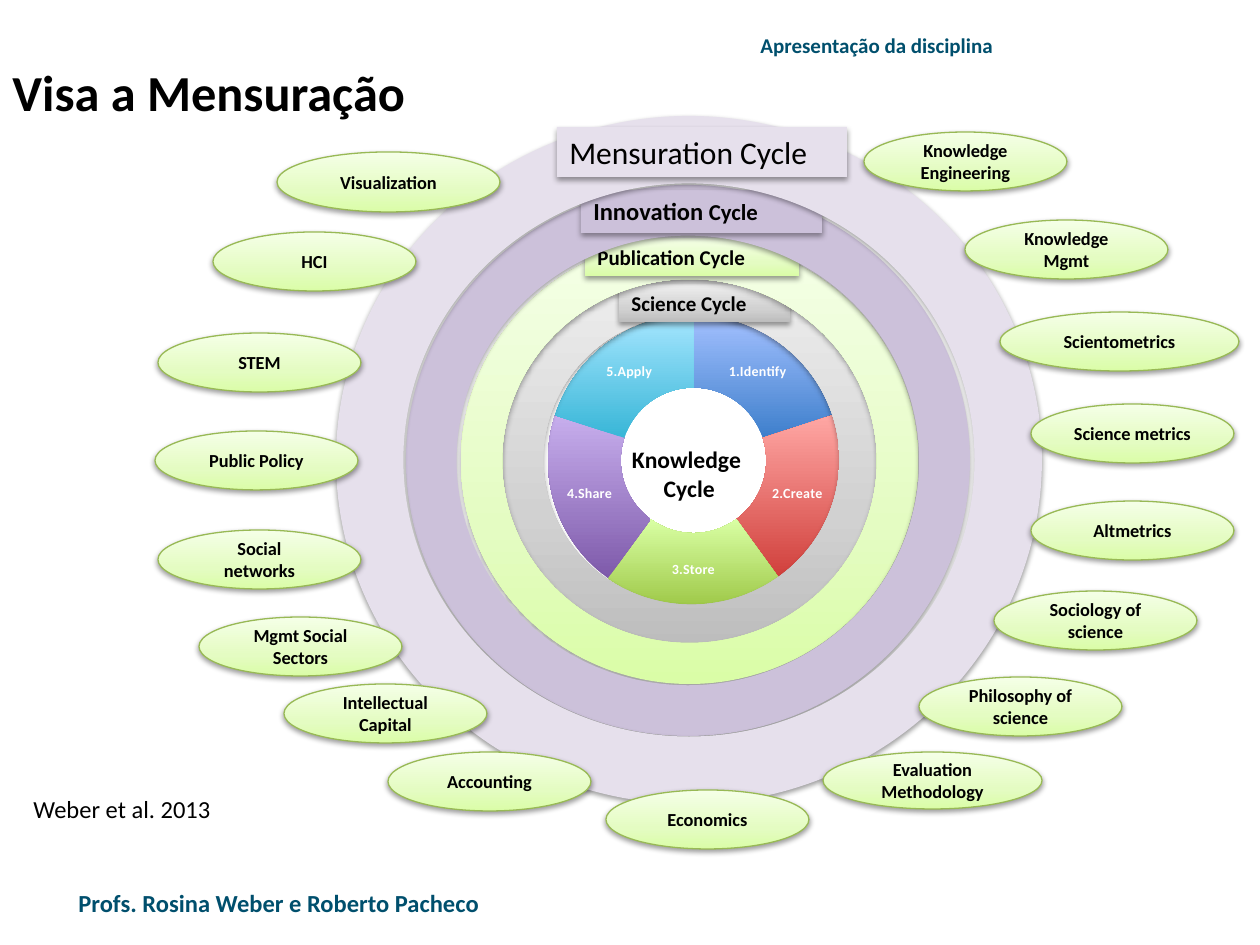
from copy import deepcopy
from dataclasses import dataclass

from lxml import etree
from pptx import Presentation
from pptx.chart.data import CategoryChartData
from pptx.dml.color import RGBColor
from pptx.enum.chart import XL_CHART_TYPE
from pptx.enum.shapes import MSO_SHAPE
from pptx.enum.text import MSO_ANCHOR, MSO_AUTO_SIZE, PP_ALIGN
from pptx.oxml.ns import qn
from pptx.util import Emu, Pt

DOUGHNUT = XL_CHART_TYPE.DOUGHNUT
DONUT, RECTANGLE, OVAL = MSO_SHAPE.DONUT, MSO_SHAPE.RECTANGLE, MSO_SHAPE.OVAL
TOP, MIDDLE = MSO_ANCHOR.TOP, MSO_ANCHOR.MIDDLE
LEFT, CENTER = PP_ALIGN.LEFT, PP_ALIGN.CENTER
FIT_SHAPE = MSO_AUTO_SIZE.SHAPE_TO_FIT_TEXT

FONT = "Calibri"
BLACK = RGBColor(0x00, 0x00, 0x00)
WHITE = RGBColor(0xFF, 0xFF, 0xFF)
TEAL = RGBColor(0x00, 0x4F, 0x6D)
GREEN_LINE = RGBColor(0x98, 0xB9, 0x55)
LILAC = (RGBColor(0xCC, 0xC1, 0xDA),)
PALE_LILAC = (RGBColor(0xE6, 0xE0, 0xEC),)
GREY = (RGBColor(0xBD, 0xBD, 0xBD), RGBColor(0xD1, 0xD1, 0xD1), RGBColor(0xEE, 0xEE, 0xEE))
GREEN = (RGBColor(0xDA, 0xFD, 0xA7), RGBColor(0xE4, 0xFC, 0xC2), RGBColor(0xF5, 0xFF, 0xE7))
GRADIENT_POSITIONS = (0, 0.35, 1)


@dataclass(frozen=True)
class Box:
    left: int
    top: int
    width: int
    height: int

    def emu(self) -> list[Emu]:
        return [px(value) for value in (self.left, self.top, self.width, self.height)]


@dataclass(frozen=True)
class TextRun:
    text: str
    size: float
    bold: bool = True
    color: RGBColor = BLACK


@dataclass(frozen=True)
class Cycle:
    ring: Box
    thickness: float
    label: Box
    runs: tuple[TextRun, ...]
    colors: tuple[RGBColor, ...]


@dataclass(frozen=True)
class Field:
    name: str
    left: int
    top: int
    width: int = 203
    height: int = 59


CYCLES = (
    Cycle(Box(501, 272, 381, 375), 0.113, Box(619, 284, 171, 38),
          (TextRun("Science Cycle", 12),), GREY),
    Cycle(Box(461, 238, 457, 446), 0.092, Box(585, 238, 214, 38),
          (TextRun("Publication Cycle", 12),), GREEN),
    Cycle(Box(406, 185, 564, 551), 0.092, Box(581, 190, 241, 43),
          (TextRun("Innovation ", 14), TextRun("Cycle", 13)), LILAC),
    Cycle(Box(336, 116, 706, 688), 0.098, Box(557, 127, 290, 50),
          (TextRun("Mensuration Cycle", 18, False),), PALE_LILAC),
)
FIELDS = (
    Field("Knowledge Engineering", 864, 132),
    Field("Knowledge Mgmt", 965, 220),
    Field("Scientometrics", 1000, 312, 239),
    Field("Science metrics", 1031, 404),
    Field("Altmetrics", 1031, 501),
    Field("Visualization", 277, 152, 223, 60),
    Field("HCI", 213, 232),
    Field("STEM", 158, 333),
    Field("Public Policy", 155, 431),
    Field("Social networks", 158, 530),
    Field("Mgmt Social Sectors", 199, 617),
    Field("Economics", 606, 790),
    Field("Evaluation Methodology", 823, 752, 219, 57),
    Field("Philosophy of science", 919, 677),
    Field("Sociology of science", 994, 591),
    Field("Accounting", 388, 752),
    Field("Intellectual Capital", 284, 684),
)
STEPS = ("1.Identify", "2.Create", "3.Store", "4.Share", "5.Apply")


def px(value: int) -> Emu:
    return Emu(value * 914400 // 126)


def add_run(paragraph, text_run: TextRun) -> None:
    run = paragraph.add_run()
    run.text = text_run.text
    run.font.name = FONT
    run.font.size = Pt(text_run.size)
    run.font.bold = text_run.bold
    run.font.color.rgb = text_run.color


def write_text(shape, runs, anchor=TOP, alignment=LEFT, auto_size=None) -> None:
    frame = shape.text_frame
    frame.word_wrap = True
    frame.vertical_anchor = anchor
    if auto_size is not None:
        frame.auto_size = auto_size
    paragraph = frame.paragraphs[0]
    paragraph.alignment = alignment
    for text_run in runs:
        add_run(paragraph, text_run)


def add_shadow(shape) -> None:
    shape.shadow.inherit = False
    effects = shape._element.spPr.find(qn("a:effectLst"))
    shadow = etree.SubElement(effects, qn("a:outerShdw"), blurRad="40000", dist="20000",
                              dir="5400000", rotWithShape="0")
    color = etree.SubElement(shadow, qn("a:srgbClr"), val="000000")
    etree.SubElement(color, qn("a:alpha"), val="38000")


def add_filled_shape(shapes, kind, box: Box, colors: tuple[RGBColor, ...]):
    shape = shapes.add_shape(kind, *box.emu())
    if len(colors) == 1:
        shape.fill.solid()
        shape.fill.fore_color.rgb = colors[0]
    else:
        shape.fill.gradient()
        shape.fill.gradient_angle = 90
        stops = shape._element.spPr.find(qn("a:gradFill")).find(qn("a:gsLst"))
        stops.insert(1, deepcopy(stops[0]))
        for stop, position, color in zip(shape.fill.gradient_stops, GRADIENT_POSITIONS, colors):
            stop.position = position
            stop.color.rgb = color
    shape.line.fill.background()
    add_shadow(shape)
    return shape


def add_cycle(slide, cycle: Cycle) -> None:
    group = slide.shapes.add_group_shape()
    ring = add_filled_shape(group.shapes, DONUT, cycle.ring, cycle.colors)
    ring.adjustments[0] = cycle.thickness
    label = add_filled_shape(group.shapes, RECTANGLE, cycle.label, cycle.colors)
    write_text(label, cycle.runs, auto_size=FIT_SHAPE)


def add_field(shapes, field: Field) -> None:
    box = Box(field.left, field.top, field.width, field.height)
    oval = add_filled_shape(shapes, OVAL, box, GREEN)
    oval.line.color.rgb = GREEN_LINE
    oval.line.width = Pt(0.75)
    write_text(oval, [TextRun(field.name, 10.5)], MIDDLE, CENTER)


def add_text(slide, box: Box, text_run: TextRun, anchor=TOP, auto_size=FIT_SHAPE) -> None:
    write_text(slide.shapes.add_textbox(*box.emu()), [text_run], anchor, auto_size=auto_size)


def set_layout(parent, index: int, **settings) -> None:
    for existing in parent.findall(qn("c:layout")):
        parent.remove(existing)
    layout = etree.Element(qn("c:layout"))
    manual = etree.SubElement(layout, qn("c:manualLayout"))
    for name, value in settings.items():
        etree.SubElement(manual, qn(f"c:{name}"), val=str(value))
    parent.insert(index, layout)


def add_knowledge_chart(slide) -> None:
    data = CategoryChartData()
    data.categories = STEPS
    data.add_series("Series 1", [20] * len(STEPS))
    chart = slide.shapes.add_chart(DOUGHNUT, *Box(505, 302, 397, 320).emu(), data).chart
    chart.chart_style = 26
    chart.has_legend = False
    chart.font.name = FONT
    chart.font.size = Pt(11)
    chart.font.color.rgb = WHITE
    plot = chart.plots[0]
    plot.vary_by_categories = True
    plot.has_data_labels = True
    labels = plot.data_labels
    labels.show_category_name = True
    labels.show_percentage = False
    labels.show_value = False
    labels.font.name = FONT
    labels.font.size = Pt(8)
    labels.font.bold = True
    labels.font.color.rgb = WHITE
    frame = chart.chart_title.text_frame
    add_run(frame.paragraphs[0], TextRun("Knowledge ", 13.5))
    add_run(frame.add_paragraph(), TextRun("Cycle", 13.5))
    set_layout(chart.chart_title._element, 1, xMode="edge", yMode="edge", x=0.31, y=0.43)
    plot_area = chart._chartSpace.chart.plotArea
    set_layout(plot_area, 0, layoutTarget="inner", xMode="edge", yMode="edge",
               x=0.04, y=0.04, w=0.87, h=0.91)


def main() -> None:
    presentation = Presentation()
    presentation.slide_width, presentation.slide_height = px(1260), px(945)
    slide = presentation.slides.add_slide(presentation.slide_layouts[6])
    add_text(slide, Box(748, 26, 502, 38), TextRun("Apresentação da disciplina", 12, color=TEAL))
    add_text(slide, Box(66, 882, 456, 43),
             TextRun("Profs. Rosina Weber e Roberto Pacheco", 14, color=TEAL))
    add_text(slide, Box(21, 788, 294, 43), TextRun("Weber et al. 2013", 14, False))
    add_knowledge_chart(slide)
    for cycle in CYCLES:
        add_cycle(slide, cycle)
    fields = slide.shapes.add_group_shape()
    for field in FIELDS:
        add_field(fields.shapes, field)
    add_text(slide, Box(0, 57, 1176, 69), TextRun("Visa a Mensuração", 28.8), MIDDLE, None)
    presentation.save("out.pptx")


if __name__ == "__main__":
    main()
